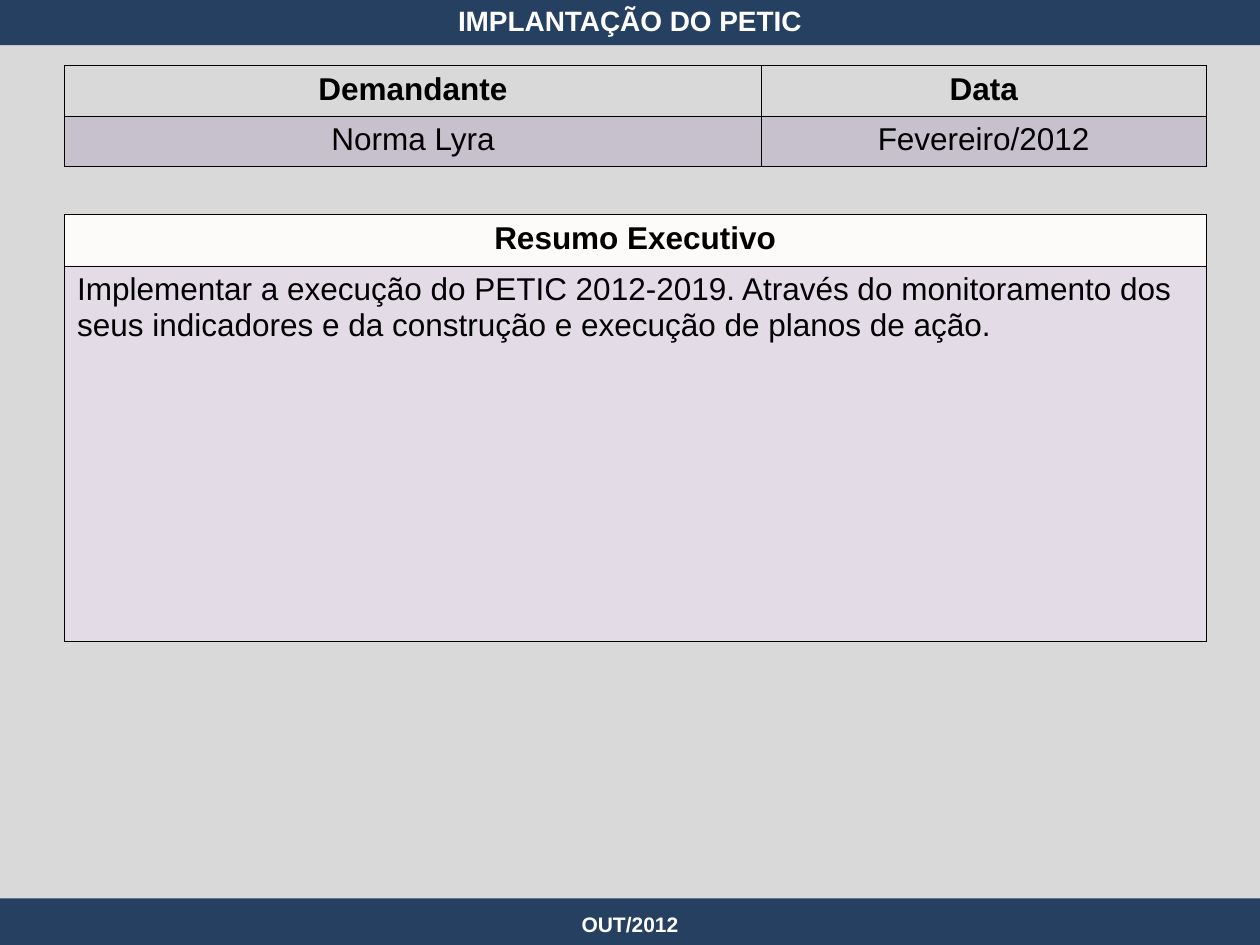
from dataclasses import dataclass

from lxml.etree import SubElement as Sub
from pptx import Presentation
from pptx.dml.color import RGBColor as Rgb
from pptx.enum.shapes import MSO_SHAPE as Shape
from pptx.enum.text import MSO_ANCHOR as Anchor, PP_ALIGN as Align
from pptx.oxml.ns import qn
from pptx.util import Cm, Pt

COLORS = {"navy": "254061", "gray": "D9D9D9", "cream": "FCFBF9",
          "violet": "8064A2", "white": "FFFFFF", "black": "000000"}
WIDE, TALL = 25.4, 19.05
LEFT, SPAN = 1.3, 23.01


@dataclass
class Box:
    left: float
    top: float
    width: float
    height: float
    color: str


@dataclass
class Grid:
    top: float
    cols: list[float]
    rows: list[float]
    cells: list[list[str]]
    align: Align


BOXES = [
    Box(0, 0.91, WIDE, 17.4, "gray"),
    Box(0, 18.11, WIDE, 0.94, "navy"),
    Box(0, -0.03, WIDE, 0.94, "navy"),
    Box(LEFT, 4.32, SPAN, 8.61, "cream"),
]
GRIDS = [
    Grid(1.32, [14.05, 8.96], [1, 1],
         [["Demandante", "Data"], ["Norma Lyra", "Fevereiro/2012"]], Align.CENTER),
    Grid(4.32, [SPAN], [1.04, 7.57],
         [["Resumo Executivo"],
          ["Implementar a execução do PETIC 2012-2019. Através do monitoramento dos "
           "seus indicadores e da construção e execução de planos de ação."]], Align.LEFT),
]


def write(frame, text: str, size: int, color: str, bold: bool, align: Align) -> None:
    frame.text = text
    para = frame.paragraphs[0]
    para.alignment = align
    font = para.font
    font.name, font.size, font.bold = "Arial", Pt(size), bold
    font.color.rgb = Rgb.from_string(COLORS[color])


def label(shape, text: str, size: int) -> None:
    """White centred text with a soft shadow."""
    frame = shape.text_frame
    frame.word_wrap = True
    frame.vertical_anchor = Anchor.MIDDLE
    write(frame, text, size, "white", True, Align.CENTER)
    props = frame.paragraphs[0].runs[0]._r.get_or_add_rPr()
    glow = Sub(Sub(props, qn("a:effectLst")), qn("a:outerShdw"),
               blurRad="38100", dist="38100", dir="2700000", algn="tl")
    tone = Sub(glow, qn("a:srgbClr"), val=COLORS["black"])
    Sub(tone, qn("a:alpha"), val="43000")


def draw_box(slide, box: Box) -> None:
    shape = slide.shapes.add_shape(Shape.RECTANGLE, Cm(box.left), Cm(box.top),
                                   Cm(box.width), Cm(box.height))
    shape.shadow.inherit = False
    shape.fill.solid()
    shape.fill.fore_color.rgb = Rgb.from_string(COLORS[box.color])
    shape.line.fill.background()


def edge(cell) -> None:
    props = cell._tc.get_or_add_tcPr()
    for side in ("lnL", "lnR", "lnT", "lnB"):
        line = Sub(props, qn(f"a:{side}"), w=str(Pt(0.25)))
        Sub(Sub(line, qn("a:solidFill")), qn("a:srgbClr"), val=COLORS["black"])


def tint(cell) -> None:
    cell.fill.solid()
    cell.fill.fore_color.rgb = Rgb.from_string(COLORS["violet"])
    tone = cell._tc.tcPr.find(f"{qn('a:solidFill')}/{qn('a:srgbClr')}")
    Sub(tone, qn("a:alpha"), val="20000")


def draw_grid(slide, grid: Grid) -> None:
    table = slide.shapes.add_table(len(grid.rows), len(grid.cols), Cm(LEFT), Cm(grid.top),
                                   Cm(sum(grid.cols)), Cm(sum(grid.rows))).table
    table.first_row = table.horz_banding = False
    for col, width in zip(table.columns, grid.cols):
        col.width = Cm(width)
    for i, (row, texts) in enumerate(zip(table.rows, grid.cells)):
        row.height = Cm(grid.rows[i])
        head = i == 0
        for cell, text in zip(row.cells, texts):
            write(cell.text_frame, text, 18, "black", head,
                  Align.CENTER if head else grid.align)
            edge(cell)
            if head:
                cell.fill.background()
            else:
                tint(cell)


def main() -> None:
    deck = Presentation()
    deck.slide_width, deck.slide_height = Cm(WIDE), Cm(TALL)
    slide = deck.slides.add_slide(deck.slide_layouts[5])

    # Background and bars
    for box in BOXES:
        draw_box(slide, box)

    # Title, brought in front of its bar
    title = slide.shapes.title
    title.left, title.top, title.width, title.height = Cm(0), Cm(-0.28), Cm(WIDE), Cm(1.4)
    label(title, "IMPLANTAÇÃO DO PETIC", 16)
    slide.shapes._spTree.append(title._element)

    # Footer
    foot = slide.shapes.add_textbox(Cm(0), Cm(18.14), Cm(WIDE), Cm(0.99))
    label(foot, "OUT/2012", 12)

    # Tables
    for grid in GRIDS:
        draw_grid(slide, grid)

    deck.save("out.pptx")


if __name__ == "__main__":
    main()
